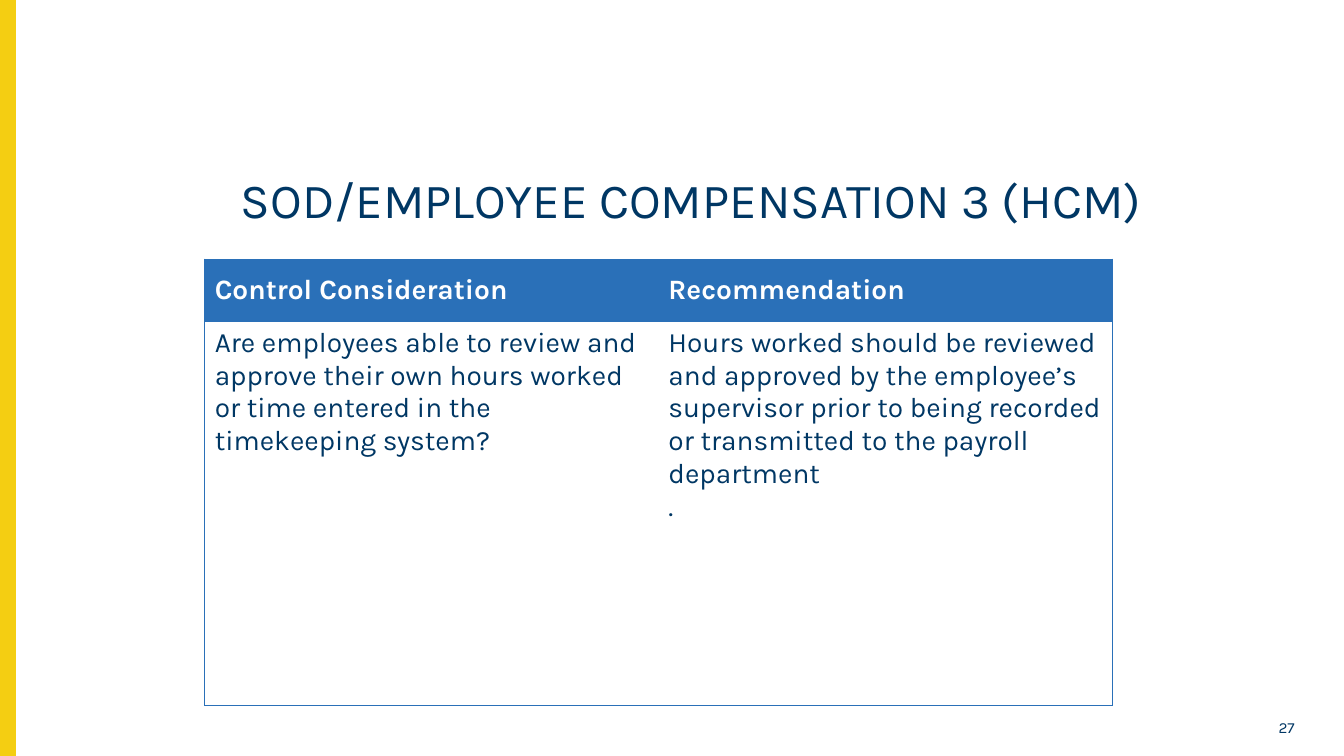
from pptx import Presentation
from pptx import util as u
from pptx.dml.color import RGBColor
from pptx.enum import shapes, text
from pptx.oxml import parse_xml

NAVY, BLUE, YELLOW, WHITE = "003764", "2A70B8", "F4CE12", "FFFFFF"
DRAWING = "http://schemas.openxmlformats.org/drawingml/2006/main"


def color(value):
    return RGBColor.from_string(value)


def style(para, size, tint, bold=False):
    para.font.name = "Karla"
    para.font.size = u.Pt(size)
    para.font.bold = bold
    para.font.color.rgb = color(tint)


deck = Presentation()
deck.slide_width, deck.slide_height = u.Inches(13.33), u.Inches(7.5)
page = deck.slides.add_slide(deck.slide_layouts[6])

stripe = page.shapes.add_shape(
    shapes.MSO_SHAPE.RECTANGLE, 0, 0, u.Inches(0.15), u.Inches(7.5))
stripe.shadow.inherit = False
stripe.fill.solid()
stripe.fill.fore_color.rgb = color(YELLOW)
stripe.line.color.rgb = color(YELLOW)
stripe.line.width = u.Pt(1)

labels = [
    ("SOD/EMPLOYEE COMPENSATION 3 (HCM)", (0.78, 1.7, 12.16, 0.87), 35,
     text.PP_ALIGN.CENTER, text.MSO_ANCHOR.TOP, 0.9),
    ("27", (12.26, 7.09, 0.68, 0.26), 11,
     text.PP_ALIGN.RIGHT, text.MSO_ANCHOR.MIDDLE, 1.0),
]
for words, place, size, align, anchor, spacing in labels:
    box = page.shapes.add_textbox(*map(u.Inches, place))
    frame = box.text_frame
    frame.word_wrap = True
    frame.vertical_anchor = anchor
    para = frame.paragraphs[0]
    para.text = words
    para.alignment = align
    para.line_spacing = spacing
    style(para, size, NAVY)

rows = [
    ["Control Consideration", "Recommendation"],
    ["Are employees able to review and approve their own hours worked "
     "or time entered in the timekeeping system?",
     "Hours worked should be reviewed and approved by the employee’s supervisor "
     "prior to being recorded or transmitted to the payroll department\n."],
]
table = page.shapes.add_table(
    2, 2, u.Inches(2.03), u.Inches(2.57), u.Inches(9), u.Inches(4.43)).table
table.horz_banding = False
for column in table.columns:
    column.width = u.Inches(4.5)
for row, height in zip(table.rows, (0.62, 3.81)):
    row.height = u.Inches(height)

for r, row in enumerate(rows):
    header = r == 0
    for c, words in enumerate(row):
        cell = table.cell(r, c)
        cell.text = words
        cell.vertical_anchor = text.MSO_ANCHOR.MIDDLE if header else text.MSO_ANCHOR.TOP
        for para in cell.text_frame.paragraphs:
            style(para, 20, WHITE if header else NAVY, header)
        outer = {"lnL": c == 0, "lnR": c == 1, "lnT": True, "lnB": True}
        properties = cell._tc.get_or_add_tcPr()
        for side, shown in outer.items():
            paint = f'<a:solidFill><a:srgbClr val="{BLUE}"/></a:solidFill>' if shown else "<a:noFill/>"
            properties.append(parse_xml(
                f'<a:{side} xmlns:a="{DRAWING}" w="{u.Pt(0.5)}">{paint}</a:{side}>'))
        cell.fill.solid()
        cell.fill.fore_color.rgb = color(BLUE if header else WHITE)

deck.save("out.pptx")
